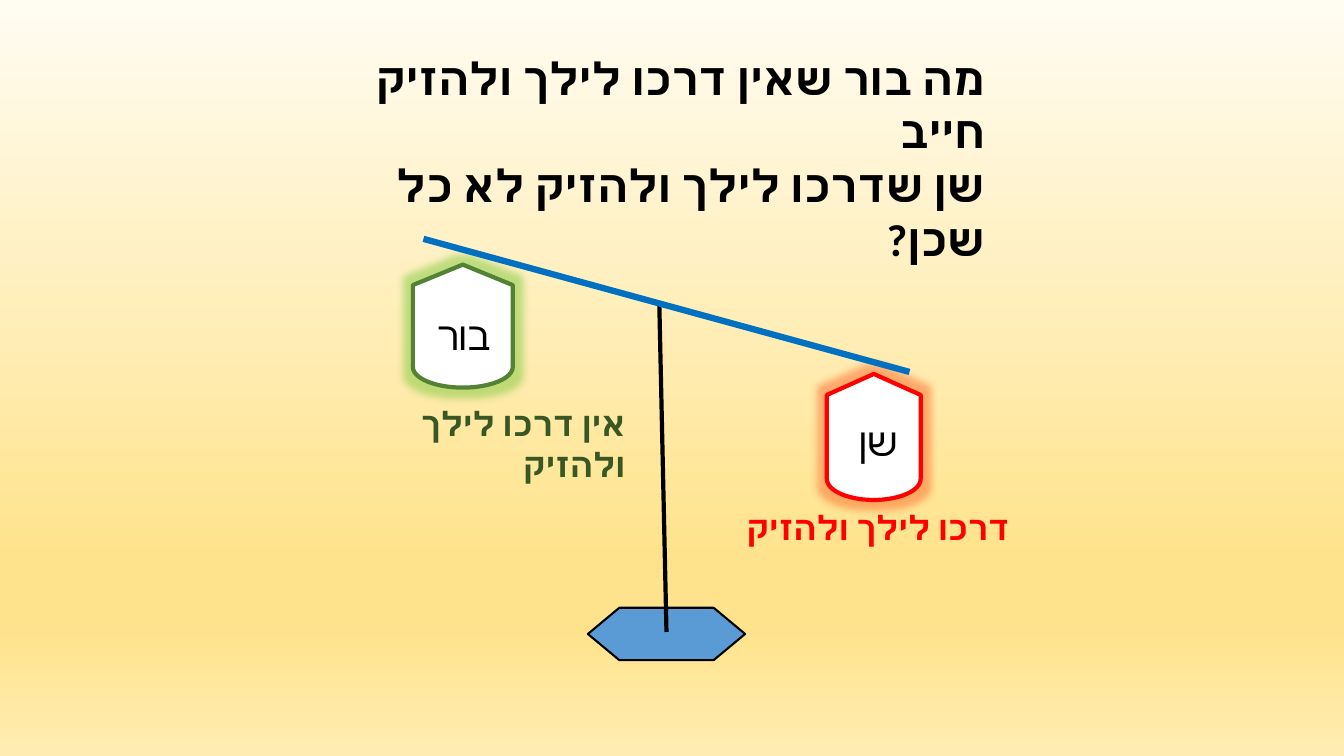
from lxml import etree
from pptx import Presentation
from pptx.dml.color import RGBColor
from pptx.enum.shapes import MSO_CONNECTOR, MSO_SHAPE
from pptx.enum.text import MSO_ANCHOR, MSO_AUTO_SIZE, PP_ALIGN
from pptx.oxml.ns import qn
from pptx.util import Inches, Pt

STRAIGHT = MSO_CONNECTOR.STRAIGHT
WEIGHT_SHAPE = MSO_SHAPE.FLOWCHART_DISPLAY
BASE_SHAPE = MSO_SHAPE.FLOWCHART_PREPARATION
RIGHT, CENTER = PP_ALIGN.RIGHT, PP_ALIGN.CENTER
WIDTH, HEIGHT = Inches(13.33), Inches(7.5)
FONT = "Calibri"
BLACK, GREEN, RED = "000000", "548235", "FF0000"
BACKDROP = [(0, "FFFCF2"), (74, "FFE38C"), (83, "FFE38C"), (100, "FFECB2")]


def rgb(color):
    return RGBColor.from_string(color)


def share(*values):
    """Turn alternating horizontal and vertical percentages into lengths."""
    return [round(value * (HEIGHT if i % 2 else WIDTH) / 100)
            for i, value in enumerate(values)]


def paint_background(slide):
    fill = slide.background.fill
    fill.gradient()
    fill.gradient_angle = 270
    stops = slide.element.find(".//" + qn("a:gsLst"))
    for stop in list(stops):
        stops.remove(stop)
    for position, color in BACKDROP:
        stop = etree.SubElement(stops, qn("a:gs"), pos=str(position * 1000))
        etree.SubElement(stop, qn("a:srgbClr"), val=color)


def write(holder, *lines, size, color=BLACK, bold=False, align=RIGHT):
    """Fill a text holder with right-to-left paragraphs."""
    frame = holder.text_frame
    frame.word_wrap = True
    frame.auto_size = MSO_AUTO_SIZE.NONE
    frame.vertical_anchor = MSO_ANCHOR.TOP
    frame.text = "\n".join(lines)
    for paragraph in frame.paragraphs:
        paragraph.alignment = align
        paragraph.space_before = Pt(0)
        paragraph._p.get_or_add_pPr().set("rtl", "1")
        font = paragraph.runs[0].font
        font.size, font.bold, font.name = Pt(size), bold, FONT
        font.color.rgb = rgb(color)
        etree.SubElement(font._element, qn("a:cs"), typeface=FONT)


def add_title(slide, box, *lines):
    title = slide.shapes.title
    title.left, title.top, title.width, title.height = share(*box)
    write(title, *lines, size=32, bold=True)


def add_label(slide, box, text, **style):
    write(slide.shapes.add_textbox(*share(*box)), text, **style)


def add_figure(slide, kind, bounds, fill, line, weight):
    figure = slide.shapes.add_shape(kind, *bounds)
    figure.shadow.inherit = False
    figure.fill.solid()
    figure.fill.fore_color.rgb = rgb(fill)
    figure.line.color.rgb = rgb(line)
    figure.line.width = Pt(weight)
    return figure


def add_weight(slide, box, line, glow_color):
    """Add a glowing weight whose tip points up; box is its upright outline."""
    left, top, width, height = share(*box)
    turn = (width - height) // 2
    weight = add_figure(slide, WEIGHT_SHAPE,
                        (left + turn, top - turn, height, width),
                        "FFFFFF", line, 3)
    weight.rotation = 90
    effects = weight._element.spPr.find(qn("a:effectLst"))
    glow = etree.SubElement(effects, qn("a:glow"), rad=str(Pt(11)))
    color = etree.SubElement(glow, qn("a:srgbClr"), val=glow_color)
    etree.SubElement(color, qn("a:alpha"), val="60000")


def add_bar(slide, ends, color, weight):
    bar = slide.shapes.add_connector(STRAIGHT, *share(*ends))
    bar.line.color.rgb = rgb(color)
    bar.line.width = Pt(weight)
    etree.SubElement(bar._element.spPr, qn("a:effectLst"))


def main():
    deck = Presentation()
    deck.slide_width, deck.slide_height = WIDTH, HEIGHT
    slide = deck.slides.add_slide(deck.slide_layouts[5])
    paint_background(slide)

    add_title(slide, (25.2, 6, 48.84, 15.73),
              "מה בור שאין דרכו לילך ולהזיק חייב",
              "שן שדרכו לילך ולהזיק לא כל שכן?")

    add_weight(slide, (30.72, 35, 7.43, 16.27), GREEN, "92D050")
    add_weight(slide, (61.52, 49.47, 6.98, 16.67), RED, "FF8040")
    add_figure(slide, BASE_SHAPE, share(43.74, 80.4, 11.7, 6.93),
               "5B9BD5", BLACK, 1.5)
    add_bar(slide, (49.06, 40.4, 49.59, 83.6), BLACK, 3)
    add_bar(slide, (31.51, 31.6, 67.67, 49.2), "0070C0", 4.5)

    add_label(slide, (31.51, 40.53, 5.7, 7.6), "בור", size=28)
    add_label(slide, (61.52, 54.53, 6, 7.6), "שן", size=28)
    add_label(slide, (23.71, 52.67, 23.56, 6.67), "אין דרכו לילך ולהזיק",
              size=24, color="385723", bold=True)
    add_label(slide, (53.56, 66.4, 23.56, 6.67), "דרכו לילך ולהזיק",
              size=24, color=RED, bold=True, align=CENTER)
    deck.save("out.pptx")


if __name__ == "__main__":
    main()
